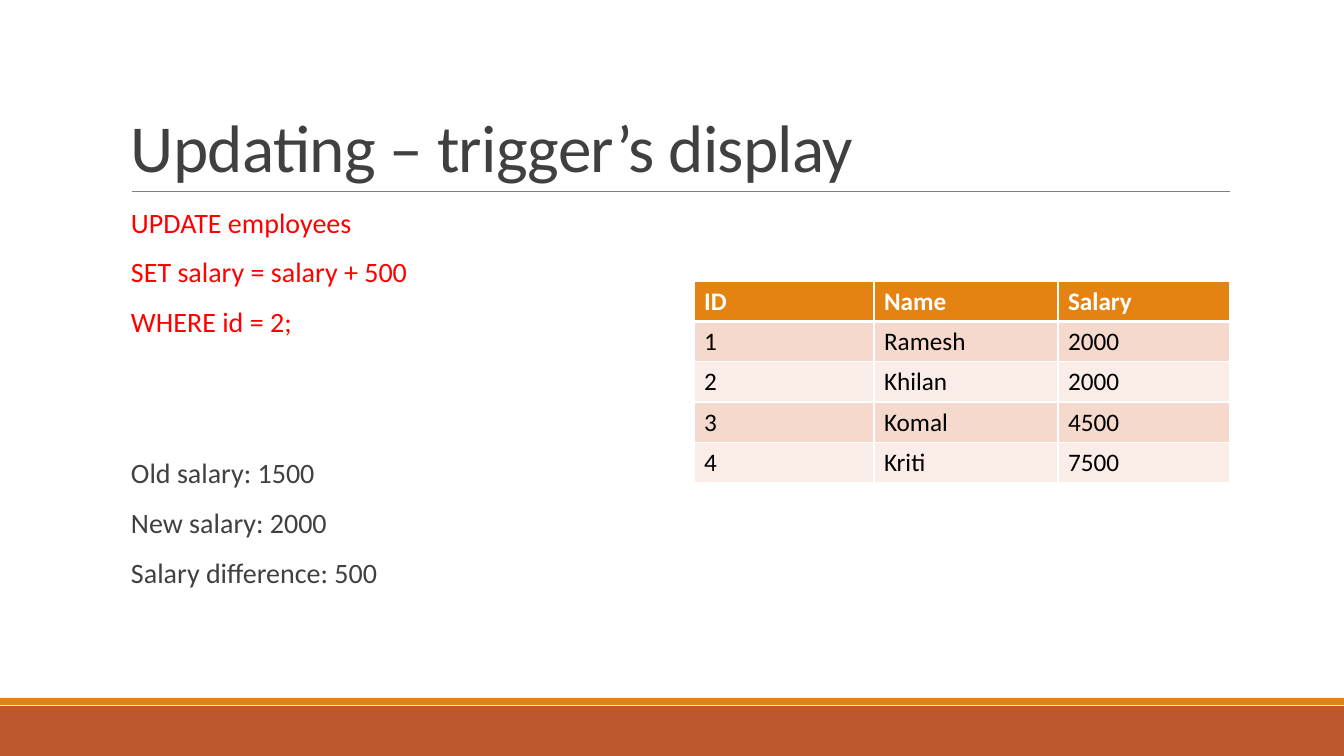
from lxml.etree import SubElement as Sub
from pptx import Presentation
from pptx.dml.color import RGBColor as RGB
from pptx.enum.shapes import MSO_CONNECTOR as Link, MSO_SHAPE as Kind
from pptx.enum.text import MSO_ANCHOR as Anchor
from pptx.oxml.ns import qn
from pptx.util import Pt

WHITE = RGB(0xFF, 0xFF, 0xFF)
BLACK = RGB(0, 0, 0)
RED = RGB(0xFF, 0, 0)
DARK = RGB(0x40, 0x40, 0x40)
GREY = RGB(0x80, 0x80, 0x80)
ORANGE = RGB(0xE4, 0x83, 0x12)
RUST = RGB(0xBD, 0x58, 0x2C)
BANDS = RGB(0xF5, 0xD9, 0xCC), RGB(0xFA, 0xED, 0xE7)

WIDE, HIGH = 1344, 756
LEFT, SPAN = 121, 1109
QUERY = ["UPDATE employees", "SET salary = salary + 500", "WHERE id = 2;"]
REPORT = ["Old salary: 1500", "New salary: 2000", "Salary difference: 500"]
STAFF = [
    ("ID", "Name", "Salary"),
    ("1", "Ramesh", "2000"),
    ("2", "Khilan", "2000"),
    ("3", "Komal", "4500"),
    ("4", "Kriti", "7500"),
]


def emu(*px):
    """Turn px into EMU, at 100.8 px to the inch."""
    return [round(n * 914400 / 100.8) for n in px]


class Page:
    font = "Calibri"

    def __init__(self, deck):
        self.slide = deck.slides.add_slide(deck.slide_layouts[6])
        self.shapes = self.slide.shapes

    def style(self, para, size, color, bold=False):
        for run in para.runs:
            font = run.font
            font.name, font.size, font.bold = self.font, Pt(size), bold
            font.color.rgb = color

    def bar(self, top, high, color):
        """Draw a band across the whole slide."""
        bar = self.shapes.add_shape(Kind.RECTANGLE, *emu(0, top, WIDE, high))
        bar.shadow.inherit = False
        bar.fill.solid()
        bar.fill.fore_color.rgb = color
        bar.line.fill.background()

    def rule(self, x1, x2, y):
        line = self.shapes.add_connector(Link.STRAIGHT, *emu(x1, y, x2, y))
        line.line.color.rgb = GREY
        line.line.width = Pt(0.5)
        Sub(line._element.spPr, qn("a:effectLst"))

    def frame(self, top, high):
        frame = self.shapes.add_textbox(*emu(LEFT, top, SPAN, high)).text_frame
        frame.word_wrap = True
        frame.margin_left, frame.margin_right = emu(10, 10)
        return frame

    def title(self, text, top, high):
        frame = self.frame(top, high)
        frame.vertical_anchor = Anchor.BOTTOM
        frame.text = text
        para = frame.paragraphs[0]
        para.line_spacing = 0.85
        self.style(para, 48, DARK)
        para.runs[0].font._element.set("spc", "-50")

    def body(self, top, high, groups, gap):
        """Write groups of (lines, color), with a gap in points between groups."""
        frame = self.frame(top, high)
        frame.text = "\n".join(line for lines, _ in groups for line in lines)
        paras = iter(frame.paragraphs)
        for lines, color in groups:
            for i in range(len(lines)):
                para = next(paras)
                para.line_spacing = 0.9
                para.space_before = Pt(12 if i else gap)
                para.space_after = Pt(2)
                self.style(para, 20, color)
        frame.paragraphs[0].space_before = Pt(12)

    def edges(self, cell, row):
        """Give a cell white borders, thick below the header row."""
        thick = {0: "lnB", 1: "lnT"}.get(row)
        for side in ("lnL", "lnR", "lnT", "lnB"):
            width = Pt(3 if side == thick else 1)
            line = Sub(cell._tc.get_or_add_tcPr(), qn("a:" + side), w=str(width))
            fill = Sub(line, qn("a:solidFill"))
            Sub(fill, qn("a:srgbClr"), val=str(WHITE))

    def table(self, left, top, widths, high, rows):
        box = emu(left, top, sum(widths), high * len(rows))
        grid = self.shapes.add_table(len(rows), len(widths), *box).table
        for col, width in zip(grid.columns, emu(*widths)):
            col.width = width
        for r, row in enumerate(rows):
            grid.rows[r].height = emu(high)[0]
            for c, text in enumerate(row):
                cell = grid.cell(r, c)
                self.edges(cell, r)
                cell.fill.solid()
                cell.fill.fore_color.rgb = BANDS[(r - 1) % 2] if r else ORANGE
                cell.text = text
                para = cell.text_frame.paragraphs[0]
                self.style(para, 18, BLACK if r else WHITE, not r)


def main():
    deck = Presentation()
    deck.slide_width, deck.slide_height = emu(WIDE, HIGH)
    page = Page(deck)
    page.bar(706, 50, RUST)
    page.bar(698, 7, ORANGE)
    page.rule(132, 1230, 191)
    page.title("Updating – trigger’s display", 31, 160)
    page.body(204, 444, [(QUERY, RED), (REPORT, DARK)], 84)
    page.table(694, 281, (180, 184, 172), 40, STAFF)
    deck.save("out.pptx")


if __name__ == "__main__":
    main()
